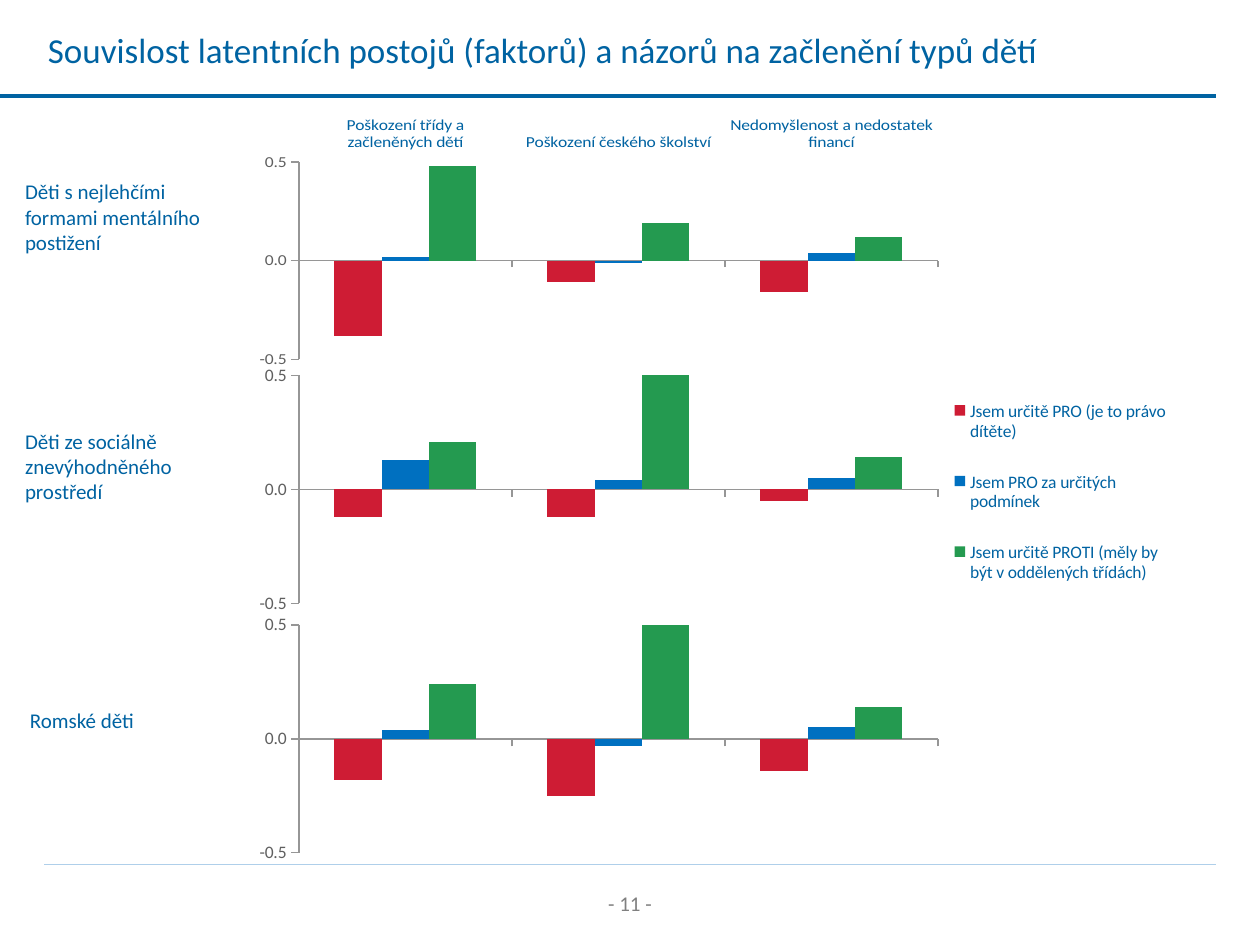
import pptx
import pptx.chart.data
import pptx.dml.color
import pptx.enum.chart
import pptx.enum.shapes
import pptx.enum.text
import pptx.oxml
import pptx.oxml.ns
import pptx.util

Pt = pptx.util.Pt
RGBColor = pptx.dml.color.RGBColor
PP_ALIGN = pptx.enum.text.PP_ALIGN
XL_TICK_LABEL_POSITION = pptx.enum.chart.XL_TICK_LABEL_POSITION
qn = pptx.oxml.ns.qn

BLUE = RGBColor(0x00, 0x63, 0xA2)
PALE_BLUE = RGBColor(0xAF, 0xCF, 0xEA)
GRAY = RGBColor(0x80, 0x80, 0x80)
DARK_GRAY = RGBColor(0x5F, 0x5F, 0x5F)
AXIS_GRAY = RGBColor(0x96, 0x96, 0x96)
RED = RGBColor(0xCE, 0x1C, 0x34)
BAR_BLUE = RGBColor(0x00, 0x70, 0xC0)
GREEN = RGBColor(0x24, 0x9A, 0x50)
FONT = "Calibri"

TITLE = "Souvislost latentních postojů (faktorů) a názorů na začlenění typů dětí"
PAGE = "- 11 -"
FACTORS = [
    "Poškození třídy a začleněných dětí",
    "Poškození českého školství",
    "Nedomyšlenost a nedostatek financí",
]
STANCES = [
    ("Jsem určitě PRO (je to právo dítěte)", RED),
    ("Jsem PRO za určitých podmínek", BAR_BLUE),
    ("Jsem určitě PROTI (měly by být v oddělených třídách)", GREEN),
]
GROUPS = [
    {
        "label": "Děti s nejlehčími formami mentálního postižení",
        "label_box": (7.2, 98.64, 128.16, 51.12),
        "chart_top": 66.96,
        "scores": [(-0.38, -0.11, -0.16), (0.02, -0.01, 0.04), (0.48, 0.19, 0.12)],
        "factor_labels": True,
    },
    {
        "label": "Děti ze sociálně znevýhodněného prostředí",
        "label_box": (7.2, 241.2, 116.64, 51.12),
        "chart_top": 207.36,
        "scores": [(-0.12, -0.12, -0.05), (0.13, 0.04, 0.05), (0.21, 0.67, 0.14)],
        "legend": True,
    },
    {
        "label": "Romské děti",
        "label_box": (10, 401.04, 75, 21.6),
        "chart_top": 349.92,
        "scores": [(-0.18, -0.25, -0.14), (0.04, -0.03, 0.05), (0.24, 0.55, 0.14)],
    },
]
CHART_LEFT, CHART_WIDTH, CHART_HEIGHT = 133.2, 537.12, 144.72
PLOT_AREA = (0.07, 0.05, 0.68, 0.9)
LEGEND_AREA = (0.76, 0.03, 0.24, 0.96)
RULES = [
    ((25.2, 494), (694.8, 494), PALE_BLUE, 0.5),
    ((0, 54.72), (694.8, 54.72), BLUE, 2.25),
]


def points(lengths):
    return [Pt(length) for length in lengths]


def set_font(font, size, color):
    font.name = FONT
    font.size = Pt(size)
    font.bold = False
    font.color.rgb = color


def write_text(frame, text, size=12, color=BLUE, align=PP_ALIGN.LEFT,
               anchor=pptx.enum.text.MSO_ANCHOR.TOP,
               fit=pptx.enum.text.MSO_AUTO_SIZE.SHAPE_TO_FIT_TEXT):
    frame.word_wrap = True
    frame.auto_size = fit
    frame.vertical_anchor = anchor
    paragraph = frame.paragraphs[0]
    paragraph.alignment = align
    run = paragraph.add_run()
    run.text = text
    set_font(run.font, size, color)


def add_rule(slide, start, end, color, weight):
    rule = slide.shapes.add_connector(
        pptx.enum.shapes.MSO_CONNECTOR.STRAIGHT, *points(start + end))
    rule.line.color.rgb = color
    rule.line.width = Pt(weight)
    properties = rule._element.spPr
    properties.append(properties.makeelement(qn("a:effectLst")))


def set_layout(parent, index, area, inner=False):
    for previous in parent.findall(qn("c:layout")):
        parent.remove(previous)
    layout = parent.makeelement(qn("c:layout"))
    manual = layout.makeelement(qn("c:manualLayout"))
    layout.append(manual)
    entries = [("layoutTarget", "inner")] if inner else []
    entries += [("xMode", "edge"), ("yMode", "edge")]
    entries += zip("xywh", area)
    for tag, value in entries:
        manual.append(manual.makeelement(qn("c:" + tag), {"val": str(value)}))
    parent.insert(index, layout)


def add_group_chart(slide, group):
    chart_data = pptx.chart.data.CategoryChartData(number_format="0.00")
    chart_data.categories = FACTORS
    for (stance, _), scores in zip(STANCES, group["scores"]):
        chart_data.add_series(stance, scores)
    chart = slide.shapes.add_chart(
        pptx.enum.chart.XL_CHART_TYPE.COLUMN_CLUSTERED,
        *points((CHART_LEFT, group["chart_top"], CHART_WIDTH, CHART_HEIGHT)),
        chart_data).chart
    chart.has_title = False
    set_font(chart.font, 10, DARK_GRAY)

    plot = chart.plots[0]
    plot.gap_width = 150
    plot.vary_by_categories = False
    for series, (_, color) in zip(plot.series, STANCES):
        series.invert_if_negative = False
        series.format.fill.solid()
        series.format.fill.fore_color.rgb = color

    for axis in (chart.category_axis, chart.value_axis):
        axis.has_major_gridlines = False
        axis.major_tick_mark = pptx.enum.chart.XL_TICK_MARK.OUTSIDE
        axis.minor_tick_mark = pptx.enum.chart.XL_TICK_MARK.NONE
        axis.format.line.color.rgb = AXIS_GRAY
        axis.format.line.width = Pt(0.75)
    score_axis = chart.value_axis
    score_axis.minimum_scale = -0.5
    score_axis.maximum_scale = 0.5
    score_axis.major_unit = 0.5
    score_axis.tick_labels.number_format = "#,##0.0"
    score_axis.tick_labels.number_format_is_linked = False
    factor_axis = chart.category_axis
    if group.get("factor_labels"):
        factor_axis.tick_label_position = XL_TICK_LABEL_POSITION.HIGH
        set_font(factor_axis.tick_labels.font, 10, BLUE)
    else:
        factor_axis.tick_label_position = XL_TICK_LABEL_POSITION.NONE

    set_layout(chart._chartSpace.chart.plotArea, 0, PLOT_AREA, inner=True)
    chart.has_legend = bool(group.get("legend"))
    if chart.has_legend:
        chart.legend.position = pptx.enum.chart.XL_LEGEND_POSITION.RIGHT
        chart.legend.include_in_layout = False
        set_font(chart.legend.font, 10, BLUE)
        set_layout(chart.legend._element, 1, LEGEND_AREA)


def main():
    deck = pptx.Presentation()
    deck.slide_width, deck.slide_height = Pt(720), Pt(540)
    slide = deck.slides.add_slide(deck.slide_layouts[5])

    for rule in RULES:
        add_rule(slide, *rule)
    page_box = slide.shapes.add_textbox(*points((314.64, 505.44, 90.72, 21.6)))
    write_text(page_box.text_frame, PAGE, color=GRAY, align=PP_ALIGN.CENTER)

    title = slide.shapes.title
    title.left, title.top, title.width, title.height = points((20.16, 0, 642.24, 56.88))
    write_text(title.text_frame, TITLE, size=20,
               anchor=pptx.enum.text.MSO_ANCHOR.MIDDLE,
               fit=pptx.enum.text.MSO_AUTO_SIZE.NONE)

    for group in GROUPS:
        add_group_chart(slide, group)
    for group in GROUPS:
        label_box = slide.shapes.add_textbox(*points(group["label_box"]))
        write_text(label_box.text_frame, group["label"])

    deck.save("out.pptx")


if __name__ == "__main__":
    main()
